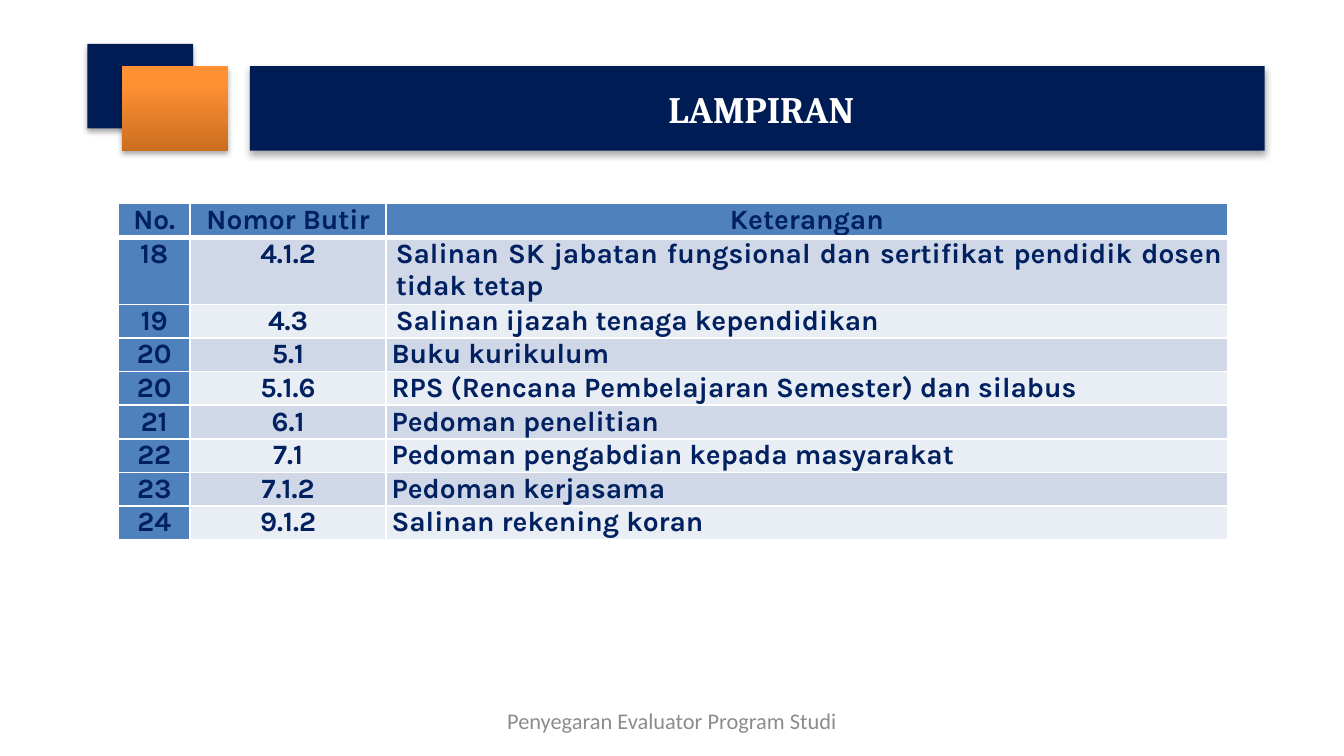
from lxml import etree
from pptx import Presentation
from pptx.dml.color import RGBColor
from pptx.enum.shapes import MSO_SHAPE
from pptx.enum.text import MSO_ANCHOR, PP_ALIGN
from pptx.oxml import parse_xml
from pptx.util import Cm, Pt

RECT = MSO_SHAPE.RECTANGLE
TOP, MIDDLE = MSO_ANCHOR.TOP, MSO_ANCHOR.MIDDLE
CENTER, JUSTIFY = PP_ALIGN.CENTER, PP_ALIGN.JUSTIFY
NS = "http://schemas.openxmlformats.org/drawingml/2006/main"
COLORS = {
    "navy": "001C54", "orange_dark": "CC6E20", "orange": "FF9034",
    "white": "FFFFFF", "black": "000000", "text": "002060", "blue": "4F81BD",
    "band_dark": "D0D8E8", "band_light": "E9EDF4", "gray": "8C8C8C",
}
TITLE_FONT = {"name": "Cambria", "size": Pt(20), "bold": True}
TABLE_FONT = {"name": "Karla", "size": Pt(15), "bold": True}
FOOTER_FONT = {"name": "Calibri", "size": Pt(12), "bold": False}

COLUMNS = [1.35, 3.71, 15.9]
LINE_HEIGHT = 6.35 / 10
INDENT = 0.08
HEADER = ["No.", "Nomor Butir", "Keterangan"]
ROWS = [
    ("18", "4.1.2", "Salinan SK jabatan fungsional dan sertifikat pendidik dosen tidak tetap"),
    ("19", "4.3", "Salinan ijazah tenaga kependidikan"),
    ("20", "5.1", "Buku kurikulum"),
    ("20", "5.1.6", "RPS (Rencana Pembelajaran Semester) dan silabus"),
    ("21", "6.1", "Pedoman penelitian"),
    ("22", "7.1", "Pedoman pengabdian kepada masyarakat"),
    ("23", "7.1.2", "Pedoman kerjasama"),
    ("24", "9.1.2", "Salinan rekening koran"),
]


def rgb(name):
    return RGBColor.from_string(COLORS[name])


class SlideBuilder:
    def __init__(self, prs):
        self.s = prs.slides.add_slide(prs.slide_layouts[5])

    def add_text(self, tf, text, font, color, align=CENTER):
        p = tf.paragraphs[0]
        p.alignment = align
        r = p.add_run()
        r.text = text
        for key, value in font.items():
            setattr(r.font, key, value)
        r.font.color.rgb = rgb(color)
        return p

    def shadow(self, sp, blur, dist, alpha):
        sp.shadow.inherit = False
        effects = sp._element.spPr.find(f"{{{NS}}}effectLst")
        effects.append(parse_xml(
            f'<a:outerShdw xmlns:a="{NS}" blurRad="{Pt(blur)}" dist="{Pt(dist)}" '
            f'dir="5400000" rotWithShape="0"><a:srgbClr val="{COLORS["black"]}">'
            f'<a:alpha val="{alpha * 1000}"/></a:srgbClr></a:outerShdw>'))

    def square(self, left, top, colors):
        sp = self.s.shapes.add_shape(RECT, Cm(left), Cm(top), Cm(2), Cm(1.6))
        sp.line.fill.background()
        if len(colors) == 1:
            sp.fill.solid()
            sp.fill.fore_color.rgb = rgb(colors[0])
        else:
            sp.fill.gradient()
            sp.fill.gradient_angle = 90
            for stop, color, position in zip(sp.fill.gradient_stops, colors, (0, 0.8)):
                stop.color.rgb = rgb(color)
                stop.position = position
        self.shadow(sp, 3.1, 1.8, 35)

    def title(self, text, left, top, width, height):
        sp = self.s.shapes.title
        box = {"left": left, "top": top, "width": width, "height": height}
        for key, value in box.items():
            setattr(sp, key, Cm(value))
        sp.fill.solid()
        sp.fill.fore_color.rgb = rgb("navy")
        self.shadow(sp, 3.5, 2.2, 32)
        sp.text_frame.vertical_anchor = MIDDLE
        self.add_text(sp.text_frame, text, TITLE_FONT, "white")

    def borders(self, cell, widths):
        tc_pr = cell._tc.get_or_add_tcPr()
        for i, (side, width) in enumerate(widths.items()):
            line = etree.Element(f"{{{NS}}}ln{side}", w=str(Pt(width)))
            fill = etree.SubElement(line, f"{{{NS}}}solidFill")
            etree.SubElement(fill, f"{{{NS}}}srgbClr", val=COLORS["white"])
            tc_pr.insert(i, line)

    def cell(self, cell, text, row, col):
        header = row == 0
        band = "band_dark" if row % 2 else "band_light"
        style = {"margin_left": Cm(0.1), "margin_right": Cm(0.1), "margin_top": 0,
                 "margin_bottom": 0, "vertical_anchor": MIDDLE if header else TOP}
        for key, value in style.items():
            setattr(cell, key, value)
        cell.fill.solid()
        cell.fill.fore_color.rgb = rgb("blue" if header or col == 0 else band)
        self.borders(cell, {"L": 1, "R": 1, "T": 3 if row == 1 else 1,
                            "B": 3 if header else 1})
        justified = col == 2 and not header
        p = self.add_text(cell.text_frame, text, TABLE_FONT, "text",
                          JUSTIFY if justified else CENTER)
        if justified and row <= 2:
            p._p.get_or_add_pPr().set("marL", str(Cm(INDENT)))

    def table(self, rows, left, top):
        height = LINE_HEIGHT * (len(rows) + 1)
        table = self.s.shapes.add_table(len(rows), len(COLUMNS), Cm(left), Cm(top),
                                        Cm(sum(COLUMNS)), Cm(height)).table
        for column, width in zip(table.columns, COLUMNS):
            column.width = Cm(width)
        for i, values in enumerate(rows):
            table.rows[i].height = Cm(LINE_HEIGHT * (2 if i == 1 else 1))
            for j, text in enumerate(values):
                self.cell(table.cell(i, j), text, i, j)

    def footer(self, text, left, top, width, height):
        sp = self.s.shapes.add_textbox(Cm(left), Cm(top), Cm(width), Cm(height))
        sp.text_frame.word_wrap = True
        sp.text_frame.vertical_anchor = MIDDLE
        self.add_text(sp.text_frame, text, FOOTER_FONT, "gray")


def main():
    prs = Presentation()
    prs.slide_width, prs.slide_height = Cm(25.4), Cm(14.29)
    slide = SlideBuilder(prs)
    slide.square(1.65, 0.83, ["navy"])
    slide.square(2.31, 1.25, ["orange_dark", "orange"])
    slide.title(" LAMPIRAN", 4.72, 1.25, 19.18, 1.6)
    slide.table([HEADER, *ROWS], 2.24, 3.85)
    slide.footer("Penyegaran Evaluator Program Studi", 8.68, 13.24, 8.04, 0.76)
    prs.save("out.pptx")


if __name__ == "__main__":
    main()
